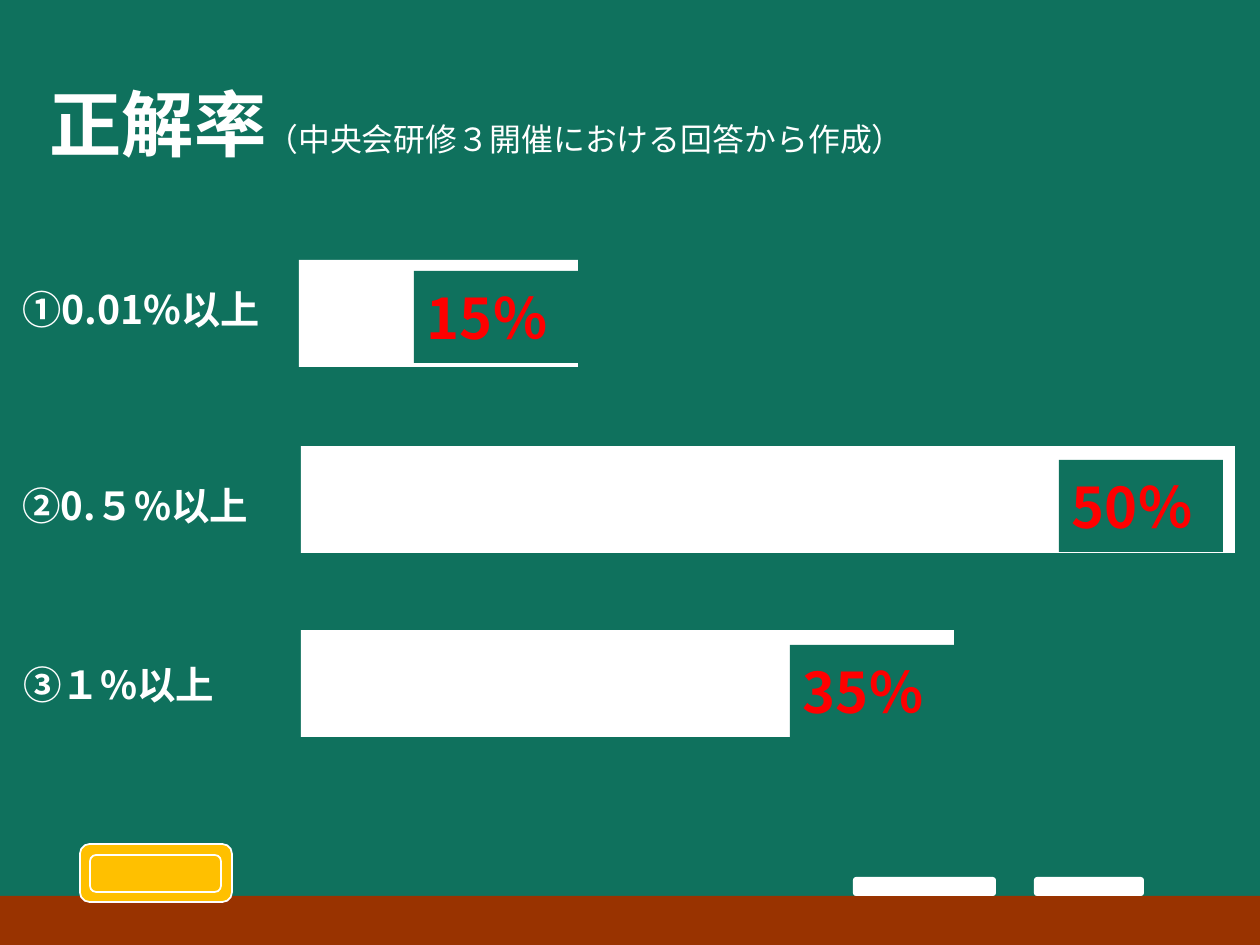
import pptx
import pptx.dml.color
import pptx.enum.shapes
import pptx.enum.text
import pptx.oxml
import pptx.oxml.ns
import pptx.util

PIXEL = 914400 / 126
BOARD = "0F715D"
WHITE = "FFFFFF"
RED = "FF0000"
YELLOW = "FFC000"
BROWN = "993300"
SANS = "Noto Sans CJK JP"
DISPLAY = "League Spartan"
RECTANGLE = pptx.enum.shapes.MSO_SHAPE.RECTANGLE
ROUNDED = pptx.enum.shapes.MSO_SHAPE.ROUNDED_RECTANGLE


def color(value):
    return pptx.dml.color.RGBColor.from_string(value)


def emu(*pixels):
    return [round(pixel * PIXEL) for pixel in pixels]


class Board:
    def __init__(self, presentation):
        self.slide = presentation.slides.add_slide(presentation.slide_layouts[5])
        self.slide.background.fill.solid()
        self.slide.background.fill.fore_color.rgb = color(BOARD)

    def group(self):
        return self.slide.shapes.add_group_shape()

    def box(self, container, place, fill, outline=None, kind=RECTANGLE):
        shape = container.shapes.add_shape(kind, *emu(*place))
        shape.shadow.inherit = False
        shape.fill.solid()
        shape.fill.fore_color.rgb = color(fill)
        if outline:
            shape.line.color.rgb = color(outline)
            shape.line.width = pptx.util.Pt(1)
        else:
            shape.line.fill.background()
        return shape

    def format_run(self, run, size, ink=WHITE, bold=True, font=SANS):
        run.font.size = pptx.util.Pt(size)
        run.font.bold = bold
        run.font.color.rgb = color(ink)
        run.font.name = font
        east_asian = pptx.oxml.parse_xml(
            f'<a:ea {pptx.oxml.ns.nsdecls("a")} typeface="{SANS}"/>')
        run.font._element.append(east_asian)

    def format_frame(self, frame, spacing=1.0):
        frame.word_wrap = True
        frame.auto_size = pptx.enum.text.MSO_AUTO_SIZE.NONE
        frame.vertical_anchor = pptx.enum.text.MSO_ANCHOR.MIDDLE
        paragraph = frame.paragraphs[0]
        paragraph.alignment = pptx.enum.text.PP_ALIGN.LEFT
        paragraph.line_spacing = spacing
        paragraph.space_after = pptx.util.Pt(6)
        return paragraph

    def title(self, place, heading, note):
        shape = self.slide.shapes.title
        shape.left, shape.top, shape.width, shape.height = emu(*place)
        shape.text_frame.text = heading
        paragraph = self.format_frame(shape.text_frame)
        paragraph.add_run().text = note
        self.format_run(paragraph.runs[0], 41.3, font=DISPLAY)
        self.format_run(paragraph.runs[1], 18.2, bold=False, font=DISPLAY)

    def label(self, container, place, text, size, ink=WHITE, spacing=1.0):
        shape = self.box(container, place, BOARD)
        shape.text_frame.text = text
        paragraph = self.format_frame(shape.text_frame, spacing)
        self.format_run(paragraph.runs[0], size, ink)

    def bar(self, place, badge_left, badge_top, text):
        group = self.group()
        self.box(group, place, WHITE)
        self.label(group, (badge_left, badge_top, 164, 92), text, 32, RED)


def main():
    presentation = pptx.Presentation()
    presentation.slide_width, presentation.slide_height = emu(1260, 945)
    board = Board(presentation)

    ledge = board.group()
    board.box(ledge, (0, 896, 1260, 49), BROWN)
    for eraser in ((80, 844, 152, 58), (90, 855, 131, 37)):
        board.box(ledge, eraser, YELLOW, WHITE, ROUNDED)
    for left, width in ((853, 143), (1034, 110)):
        board.box(ledge, (left, 877, width, 19), WHITE, kind=ROUNDED)

    board.title((37, 77, 1186, 92), "正解率", "（中央会研修３開催における回答から作成）")

    labels = (
        ("①0.01%以上", 10, 267, 22.4, 0.8),
        ("②0.５%以上", 10, 459, 22, 1.0),
        ("③１%以上", 11, 638, 22, 1.0),
    )
    for text, left, top, size, spacing in labels:
        board.label(board.slide, (left, top, 289, 92), text, size, spacing=spacing)

    bars = (
        ("15％", 299, 260, 279, 414, 271),
        ("50％", 301, 446, 934, 1059, 460),
        ("35％", 301, 630, 653, 790, 645),
    )
    for text, left, top, width, badge_left, badge_top in bars:
        board.bar((left, top, width, 107), badge_left, badge_top, text)

    presentation.save("out.pptx")


if __name__ == "__main__":
    main()
